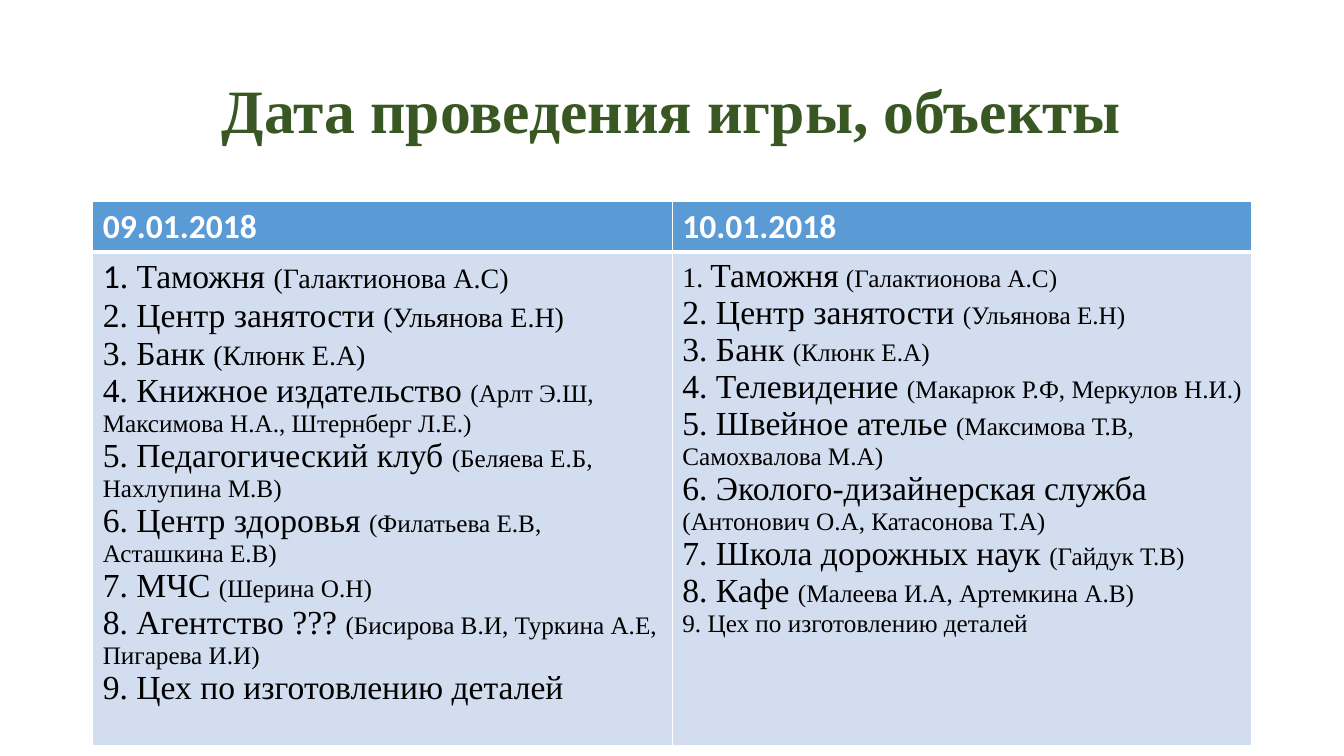
from lxml import etree
from pptx import Presentation
from pptx.dml.color import RGBColor
from pptx.enum import text
from pptx.oxml import ns
from pptx.util import Pt

GREEN = RGBColor(0x38, 0x57, 0x23)
BLUE = RGBColor(0x5B, 0x9B, 0xD5)
PALE_BLUE = RGBColor(0xD2, 0xDE, 0xEF)
WHITE = RGBColor(0xFF, 0xFF, 0xFF)
BLACK = RGBColor(0, 0, 0)
SERIF = "Times New Roman"

# Each day: date, then lines made of (text, size) runs
DAYS = [
    ("09.01.2018", [
        [("1", 24), (". Таможня ", 24), ("(Галактионова А.С)", 20)],
        [("2. Центр занятости ", 24), ("(Ульянова Е.Н)", 20)],
        [("3. Банк ", 24), ("(Клюнк Е.А)", 20)],
        [("4. Книжное издательство ", 24), ("(Арлт Э.Ш, Максимова Н.А., Штернберг Л.Е.)", 18)],
        [("5. Педагогический клуб ", 24), ("(Беляева Е.Б, Нахлупина М.В)", 18)],
        [("6. Центр здоровья ", 24), ("(Филатьева Е.В, Асташкина Е.В)", 18)],
        [("7. МЧС ", 24), ("(Шерина О.Н)", 18)],
        [("8. Агентство ??? ", 24), ("(Бисирова В.И, Туркина А.Е, Пигарева И.И)", 18)],
        [("9. Цех по изготовлению деталей", 24)],
    ]),
    ("10.01.2018", [
        [("1. ", 20), ("Таможня", 24), (" ", 20), ("(Галактионова А.С)", 18)],
        [("2. Центр занятости ", 24), ("(Ульянова Е.Н)", 18)],
        [("3. Банк ", 24), ("(Клюнк Е.А)", 18)],
        [("4. Телевидение ", 24), ("(Макарюк Р.Ф, Меркулов Н.И.)", 18)],
        [("5. Швейное ателье ", 24), ("(Максимова Т.В, Самохвалова М.А)", 18)],
        [("6. Эколого-дизайнерская служба ", 24), ("(Антонович О.А, Катасонова Т.А)", 18)],
        [("7. Школа дорожных наук ", 24), ("(Гайдук Т.В)", 18)],
        [("8. Кафе ", 24), ("(Малеева И.А, Артемкина А.В)", 18)],
        [("9. Цех по изготовлению деталей", 18)],
    ]),
]


def style_font(font, name, color, bold):
    font.name = name
    font.color.rgb = color
    font.bold = bold


def style_cell(cell, color, top_width, bottom_width):
    """Fill the cell and give it white borders, widths in points."""
    cell.fill.solid()
    cell.fill.fore_color.rgb = color
    properties = cell._tc.get_or_add_tcPr()
    borders = [("a:lnL", 1), ("a:lnR", 1), ("a:lnT", top_width), ("a:lnB", bottom_width)]
    for index, (tag, width) in enumerate(borders):
        line = etree.Element(ns.qn(tag), w=str(Pt(width)))
        fill = etree.SubElement(line, ns.qn("a:solidFill"))
        etree.SubElement(fill, ns.qn("a:srgbClr"), val=str(WHITE))
        properties.insert(index, line)


presentation = Presentation()
presentation.slide_width = Pt(960)
presentation.slide_height = Pt(540)
slide = presentation.slides.add_slide(presentation.slide_layouts[6])

title = slide.shapes.add_textbox(Pt(66), Pt(28.75), Pt(828), Pt(104.4))
title.text_frame.word_wrap = True
title.text_frame.vertical_anchor = text.MSO_ANCHOR.MIDDLE
paragraph = title.text_frame.paragraphs[0]
paragraph.text = "Дата проведения игры, объекты"
paragraph.alignment = text.PP_ALIGN.CENTER
paragraph.line_spacing = 0.9
paragraph.font.size = Pt(44)
style_font(paragraph.font, SERIF, GREEN, True)

table = slide.shapes.add_table(2, len(DAYS), Pt(66.25), Pt(144), Pt(828), Pt(386)).table
table.rows[0].height = Pt(36)
table.rows[1].height = Pt(350)

for column, (date, lines) in enumerate(DAYS):
    header = table.cell(0, column)
    style_cell(header, BLUE, 1, 3)
    paragraph = header.text_frame.paragraphs[0]
    paragraph.text = date
    paragraph.font.size = Pt(24)
    style_font(paragraph.font, "Calibri", WHITE, True)

    body = table.cell(1, column)
    style_cell(body, PALE_BLUE, 3, 1)
    for number, line in enumerate(lines):
        frame = body.text_frame
        paragraph = frame.add_paragraph() if number else frame.paragraphs[0]
        style_font(paragraph.font, SERIF, BLACK, False)
        for words, size in line:
            run = paragraph.add_run()
            run.text = words
            run.font.size = Pt(size)

first_number = table.cell(1, 0).text_frame.paragraphs[0].runs[0]
first_number.font.name = "Calibri"

presentation.save("out.pptx")
